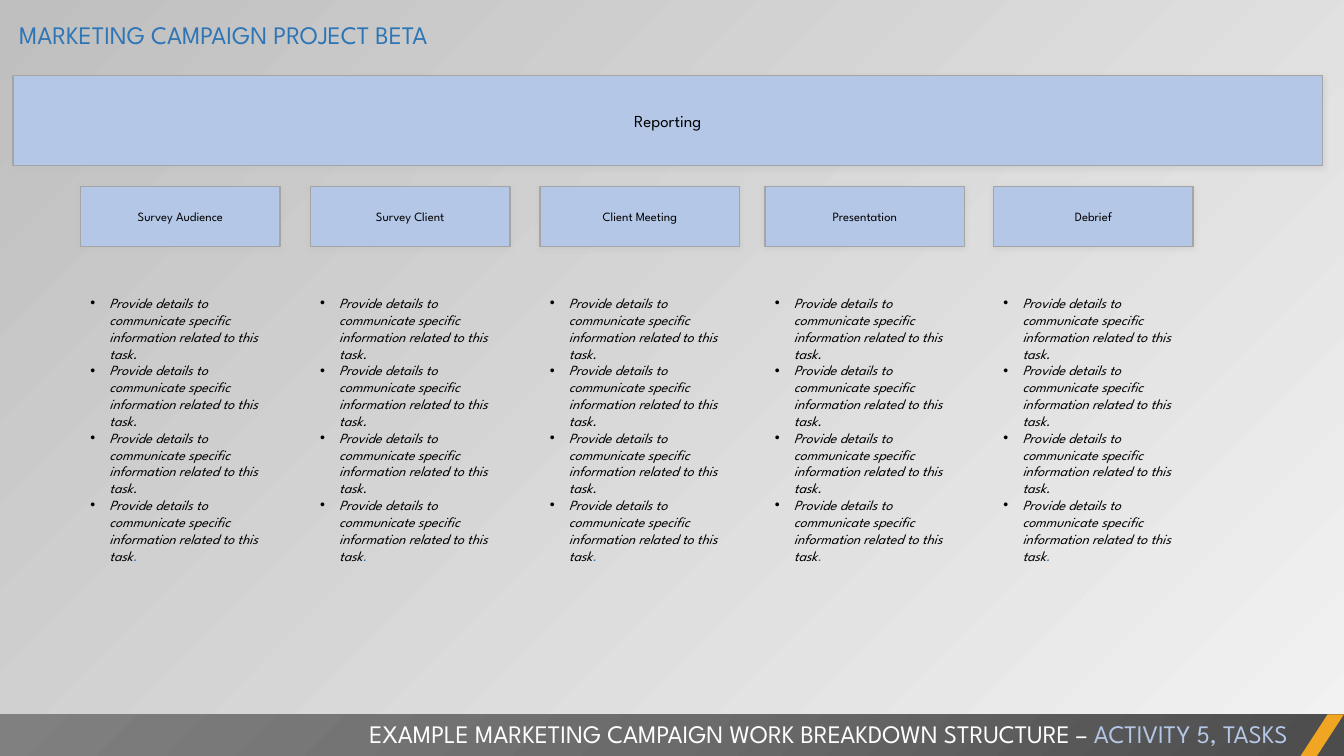
from lxml.etree import SubElement
from pptx import Presentation
from pptx.dml.color import RGBColor
from pptx.enum.shapes import MSO_SHAPE
from pptx.enum.text import MSO_ANCHOR, MSO_AUTO_SIZE, PP_ALIGN
from pptx.oxml import parse_xml
from pptx.oxml.ns import nsdecls, qn
from pptx.util import Cm, Pt

FONT = "League Spartan"
PALE_BLUE = "B4C7E7"
BLUE = "2E75B6"
SLIDE_WIDTH = 33.87
TASK_WIDTH = 5.03
TASKS = {
    "Survey Audience": 2.03,
    "Survey Client": 7.82,
    "Client Meeting": 13.61,
    "Presentation": 19.28,
    "Debrief": 25.04,
}
DETAIL = "Provide details to communicate specific information related to this task"
DETAIL_COUNT = 4


def rgb(hex_colour):
    return RGBColor.from_string(hex_colour)


def write(paragraph, text, size=10, colour="000000", italic=False, align=None):
    if align is not None:
        paragraph.alignment = align
    run = paragraph.add_run()
    run.text = text
    run.font.name = FONT
    run.font.size = Pt(size)
    run.font.italic = italic
    run.font.color.rgb = rgb(colour)


def add_block(slide, preset, left, top, width, height):
    block = slide.shapes.add_shape(preset, Cm(left), Cm(top), Cm(width), Cm(height))
    block.shadow.inherit = False
    block.line.fill.background()
    return block


def add_soft_shadow(block):
    effects = block._element.spPr.find(qn("a:effectLst"))
    shadow = SubElement(effects, qn("a:outerShdw"), blurRad=str(Pt(4)),
                        dist=str(Pt(1)), dir="5400000", algn="t", rotWithShape="0")
    tint = SubElement(shadow, qn("a:srgbClr"), val="BFBFBF")
    SubElement(tint, qn("a:alpha"), val="40000")


def add_heading_box(slide, text, size, left, top, width, height):
    box = add_block(slide, MSO_SHAPE.RECTANGLE, left, top, width, height)
    box.fill.solid()
    box.fill.fore_color.rgb = rgb(PALE_BLUE)
    box.line.color.rgb = rgb("A5A5A5")
    box.line.width = Pt(1)
    add_soft_shadow(box)
    box.text_frame.vertical_anchor = MSO_ANCHOR.MIDDLE
    write(box.text_frame.paragraphs[0], text, size=size, align=PP_ALIGN.CENTER)


def add_text_frame(slide, left, top, width, height):
    frame = slide.shapes.add_textbox(Cm(left), Cm(top), Cm(width), Cm(height)).text_frame
    frame.word_wrap = True
    frame.auto_size = MSO_AUTO_SIZE.SHAPE_TO_FIT_TEXT
    return frame


def add_bullet(paragraph):
    properties = paragraph._p.get_or_add_pPr()
    properties.set("marL", str(Cm(0.48)))
    properties.set("indent", str(-Cm(0.48)))
    SubElement(properties, qn("a:buFont"), typeface="Arial")
    SubElement(properties, qn("a:buChar"), char="•")


def add_details(slide, left):
    frame = add_text_frame(slide, left, 7.3, TASK_WIDTH, 7.62)
    for number in range(1, DETAIL_COUNT + 1):
        detail = frame.paragraphs[0] if number == 1 else frame.add_paragraph()
        add_bullet(detail)
        write(detail, DETAIL, italic=True)
        stop_colour = BLUE if number == DETAIL_COUNT else "000000"
        write(detail, ".", italic=True, colour=stop_colour)


def paint_background(slide):
    backdrop = slide.background.fill
    backdrop.gradient()
    backdrop.gradient_angle = 135
    for stop, colour in zip(backdrop.gradient_stops, ("F2F2F2", "BFBFBF")):
        stop.color.rgb = rgb(colour)


def add_footer(slide):
    band = add_block(slide, MSO_SHAPE.RECTANGLE, 0, 18, SLIDE_WIDTH, 1.06)
    shades = {0: "4C4C4C", 50000: "6B6B6B", 100000: "808080"}
    stops = "".join(f'<a:gs pos="{place}"><a:srgbClr val="{shade}"/></a:gs>'
                    for place, shade in shades.items())
    gradient = parse_xml(
        f'<a:gradFill {nsdecls("a")} rotWithShape="1"><a:gsLst>{stops}</a:gsLst>'
        '<a:path path="circle"><a:fillToRect l="100000" t="100000"/></a:path>'
        '</a:gradFill>')
    band._element.spPr.find(qn("a:prstGeom")).addnext(gradient)

    accent = add_block(slide, MSO_SHAPE.PARALLELOGRAM, 32.77, 18, 1.1, 1.06)
    accent.adjustments[0] = 0.65
    accent.fill.solid()
    accent.fill.fore_color.rgb = rgb("F0A622")

    caption = add_text_frame(slide, -0.3, 17.98, 33, 1.03).paragraphs[0]
    write(caption, "EXAMPLE MARKETING CAMPAIGN WORK BREAKDOWN STRUCTURE – ",
          size=18, colour="FFFFFF", align=PP_ALIGN.RIGHT)
    write(caption, "ACTIVITY 5, TASKS", size=18, colour=PALE_BLUE)


def main():
    presentation = Presentation()
    presentation.slide_width = Cm(SLIDE_WIDTH)
    presentation.slide_height = Cm(19.05)
    slide = presentation.slides.add_slide(presentation.slide_layouts[6])
    paint_background(slide)
    add_heading_box(slide, "Reporting", 12, 0.33, 1.9, 33, 2.28)
    add_footer(slide)
    title = add_text_frame(slide, 0.23, 0.36, 25.68, 1.03).paragraphs[0]
    write(title, "MARKETING CAMPAIGN PROJECT BETA", size=18, colour=BLUE)
    for task, left in TASKS.items():
        add_heading_box(slide, task, 9, left, 4.7, TASK_WIDTH, 1.52)
        add_details(slide, left)
    presentation.save("out.pptx")


if __name__ == "__main__":
    main()
